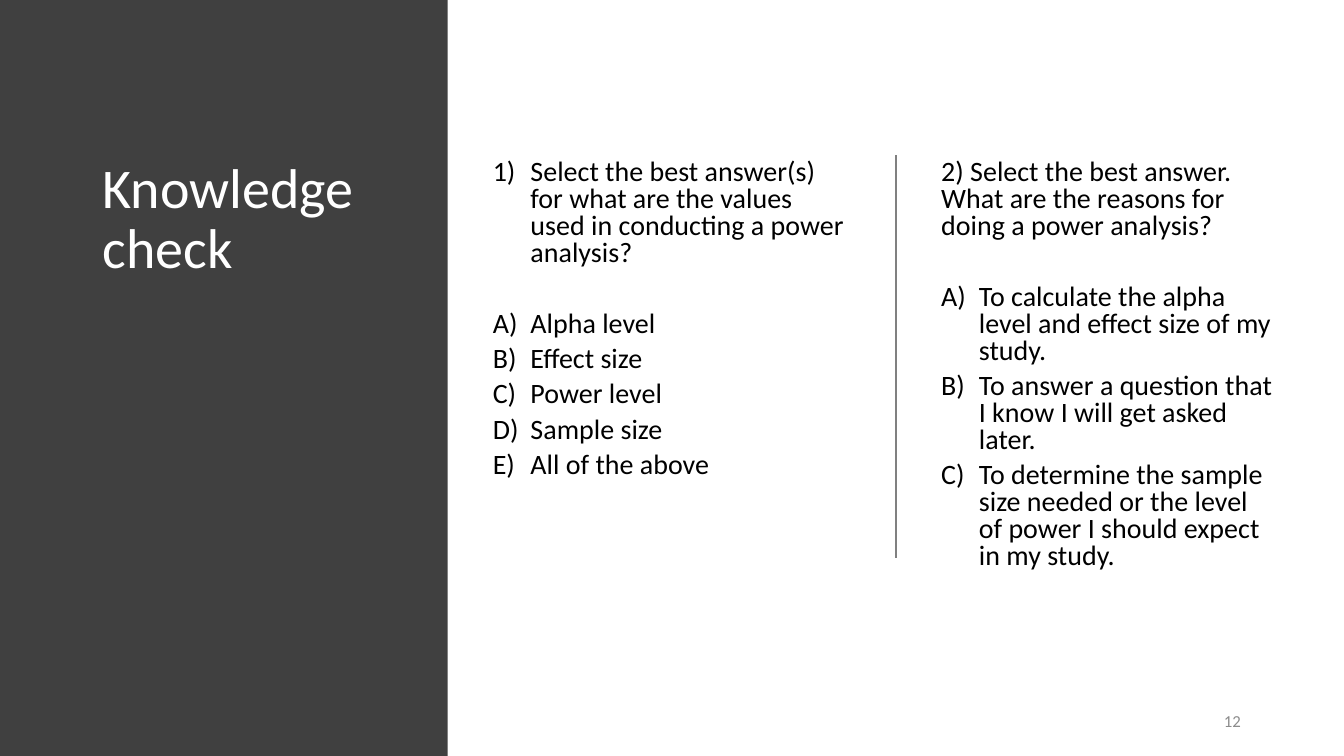
from dataclasses import dataclass

from pptx import Presentation
from pptx.dml.color import RGBColor
from pptx.enum.shapes import MSO_CONNECTOR, MSO_SHAPE
from pptx.enum.text import MSO_ANCHOR, PP_ALIGN
from pptx.oxml.ns import qn
from pptx.util import Cm, Pt

RECTANGLE = MSO_SHAPE.RECTANGLE
STRAIGHT = MSO_CONNECTOR.STRAIGHT
TOP, MIDDLE = MSO_ANCHOR.TOP, MSO_ANCHOR.MIDDLE
LEFT, RIGHT = PP_ALIGN.LEFT, PP_ALIGN.RIGHT

SLIDE_WIDTH, SLIDE_HEIGHT = 33.87, 19.05
PANEL_WIDTH = 11.28
CONTENT_TOP, CONTENT_HEIGHT = 3.91, 12.12
DIVIDER_LEFT, DIVIDER_HEIGHT = 22.58, 10.16
HANGING_INDENT = 0.95
ANSWER_GAP, QUESTION_GAP = 6, 31.5
NUMBERED, LETTERED = "arabicParenR", "alphaUcParenR"


@dataclass(frozen=True)
class Theme:
    font: str = "Calibri"
    panel: RGBColor = RGBColor(0x40, 0x40, 0x40)
    title: RGBColor = RGBColor(0xFF, 0xFF, 0xFF)
    body: RGBColor = RGBColor(0x00, 0x00, 0x00)
    divider: RGBColor = RGBColor(0x80, 0x80, 0x80)
    page_number: RGBColor = RGBColor(0x8C, 0x8C, 0x8C)
    title_size: int = 40
    body_size: int = 20
    page_number_size: int = 12


class SlideBuilder:
    def __init__(self, page, theme):
        self.page = page
        self.theme = theme

    def panel(self, left, top, width, height):
        box = self.page.shapes.add_shape(
            RECTANGLE, Cm(left), Cm(top), Cm(width), Cm(height))
        box.shadow.inherit = False
        box.fill.solid()
        box.fill.fore_color.rgb = self.theme.panel
        box.line.fill.background()

    def divider(self, left, top, height):
        line = self.page.shapes.add_connector(
            STRAIGHT, Cm(left), Cm(top), Cm(left), Cm(top + height))
        line.line.color.rgb = self.theme.divider
        line.line.width = Pt(1)
        properties = line._element.spPr
        properties.append(properties.makeelement(qn("a:effectLst"), {}))

    def text_box(self, left, top, width, height, anchor=TOP):
        box = self.page.shapes.add_textbox(
            Cm(left), Cm(top), Cm(width), Cm(height))
        box.text_frame.word_wrap = True
        box.text_frame.vertical_anchor = anchor
        return box.text_frame

    def style(self, para, size, color, spacing=1.0, alignment=LEFT):
        para.line_spacing = spacing
        para.alignment = alignment
        for span in para.runs:
            span.font.name = self.theme.font
            span.font.size = Pt(size)
            span.font.color.rgb = color

    def number(self, para, scheme):
        properties = para._p.get_or_add_pPr()
        properties.set("marL", str(Cm(HANGING_INDENT)))
        properties.set("indent", str(-Cm(HANGING_INDENT)))
        properties.append(
            properties.makeelement(qn("a:buAutoNum"), {"type": scheme}))

    def title(self, text, left, width):
        frame = self.text_box(left, CONTENT_TOP, width, CONTENT_HEIGHT)
        frame.text = text
        self.style(frame.paragraphs[0], self.theme.title_size,
                   self.theme.title, 0.9)

    def question(self, left, width, prompt, answers, prompt_scheme=None):
        frame = self.text_box(left, CONTENT_TOP, width, CONTENT_HEIGHT)
        frame.text = "\n".join([prompt, *answers])
        for index, para in enumerate(frame.paragraphs):
            self.style(para, self.theme.body_size, self.theme.body, 0.8)
            para.space_after = Pt(ANSWER_GAP if index else QUESTION_GAP)
            scheme = LETTERED if index else prompt_scheme
            if scheme:
                self.number(para, scheme)

    def page_number(self, text, left, top, width, height):
        frame = self.text_box(left, top, width, height, MIDDLE)
        frame.text = text
        para = frame.paragraphs[0]
        self.style(para, self.theme.page_number_size,
                   self.theme.page_number, alignment=RIGHT)
        para.space_after = Pt(6)


def main():
    deck = Presentation()
    deck.slide_width, deck.slide_height = Cm(SLIDE_WIDTH), Cm(SLIDE_HEIGHT)
    builder = SlideBuilder(deck.slides.add_slide(deck.slide_layouts[6]), Theme())

    builder.panel(0, 0, PANEL_WIDTH, SLIDE_HEIGHT)
    builder.title("Knowledge check", 2.34, 8.05)
    builder.question(
        12.17, 9.53,
        "Select the best answer(s) for what are the values used in "
        "conducting a power analysis?",
        ["Alpha level", "Effect size", "Power level", "Sample size",
         "All of the above"],
        NUMBERED)
    builder.divider(DIVIDER_LEFT, CONTENT_TOP, DIVIDER_HEIGHT)
    builder.question(
        23.47, 8.89,
        "2) Select the best answer. What are the reasons for doing a "
        "power analysis?",
        ["To calculate the alpha level and effect size of my study.",
         "To answer a question that I know I will get asked later.",
         "To determine the sample size needed or the level of power I "
         "should expect in my study."])
    builder.page_number("12", 25.55, 17.65, 5.97, 1.02)

    deck.save("out.pptx")


if __name__ == "__main__":
    main()
